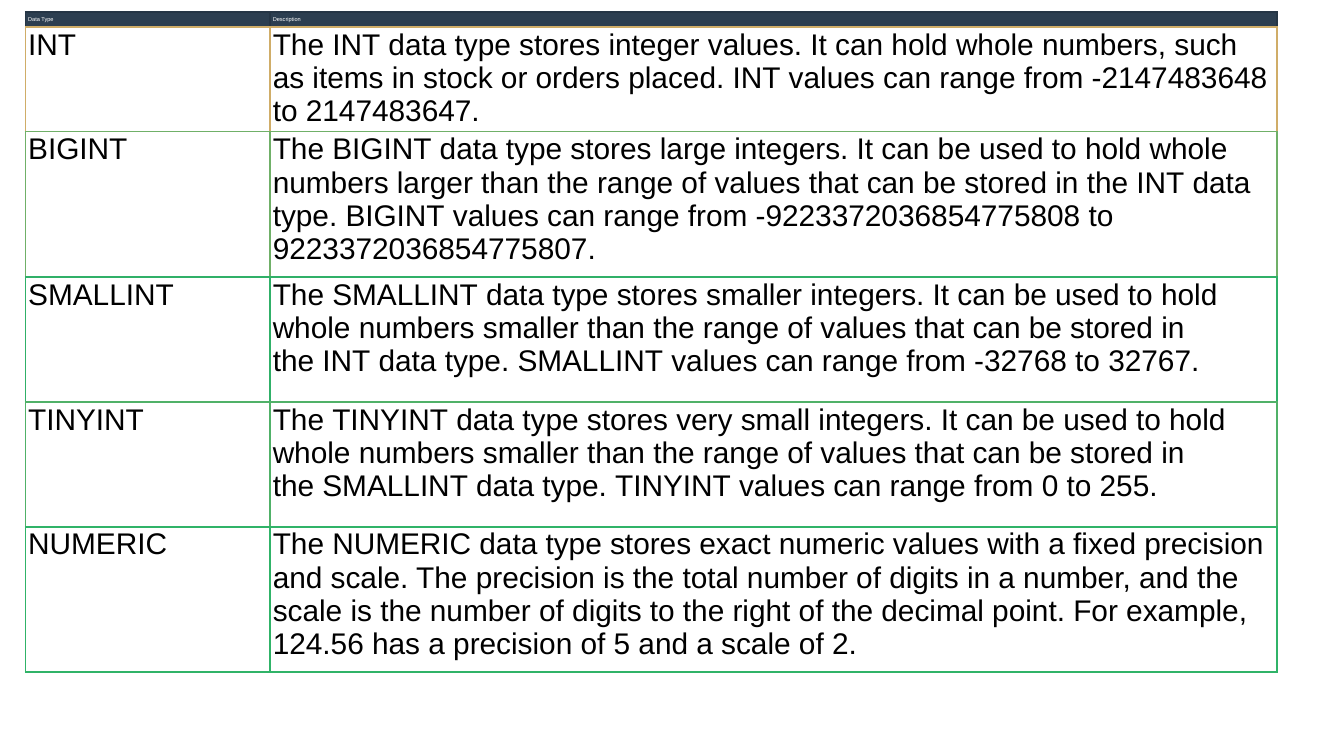
from lxml import etree
from pptx import Presentation
from pptx.dml.color import RGBColor
from pptx.enum.text import MSO_ANCHOR
from pptx.oxml.ns import qn
from pptx.util import Inches, Pt

TOP = MSO_ANCHOR.TOP
MIDDLE = MSO_ANCHOR.MIDDLE
BLANK_LAYOUT = 6
NO_BREAK_SPACE = chr(160)

COLUMN_WIDTHS = [1.82, 7.49]
ROW_HEIGHTS = [0.11, 0.78, 1.08, 0.93, 0.93, 1.08]
ROW_ACCENTS = ["253545", "D0AD68", "70B068", "30B068", "50B168", "30B368"]

ROWS = [
    ("Data Type", "Description"),
    ("INT", "The~INT~data type stores integer values. It can hold whole numbers, such as items in stock "
            "or orders placed.~INT~values can range from -2147483648 to 2147483647."),
    ("BIGINT", "The~BIGINT~data type stores large integers. It can be used to hold whole numbers larger "
               "than the range of values that can be stored in the~INT~data type.~BIGINT~values can "
               "range from -9223372036854775808 to 9223372036854775807."),
    ("SMALLINT", "The~SMALLINT~data type stores smaller integers. It can be used to hold whole numbers "
                 "smaller than the range of values that can be stored in the~INT~data type.~SMALLINT~"
                 "values can range from -32768 to 32767."),
    ("TINYINT", "The~TINYINT~data type stores very small integers. It can be used to hold whole numbers "
                "smaller than the range of values that can be stored in the~SMALLINT~data type.~TINYINT~"
                "values can range from 0 to 255."),
    ("NUMERIC", "The~NUMERIC~data type stores exact numeric values with a fixed precision and scale. The "
                "precision is the total number of digits in a number, and the scale is the number of "
                "digits to the right of the decimal point. For example, 124.56 has a precision of 5 and "
                "a scale of 2."),
]

HEADER_STYLE = {"size": 3, "color": "FFFFFF", "fill": "2C3E50", "anchor": MIDDLE}
BODY_STYLE = {"size": 16, "color": "000000", "fill": "FFFFFF", "anchor": TOP}


def rgb(value):
    return RGBColor.from_string(value)


class SlideBuilder:
    font_name = "Arial"
    border_width = Pt(1)
    cell_format = {
        "margin_left": Inches(0.02),
        "margin_right": Inches(0.02),
        "margin_top": Inches(0.01),
        "margin_bottom": Inches(0.01),
    }

    def __init__(self, slide):
        self.slide = slide

    def borders(self, cell, accent, bottom):
        properties = cell._tc.get_or_add_tcPr()
        for tag, color in (("lnL", accent), ("lnR", accent), ("lnT", accent), ("lnB", bottom)):
            line = etree.SubElement(properties, qn(f"a:{tag}"), w=str(self.border_width))
            fill = etree.SubElement(line, qn("a:solidFill"))
            etree.SubElement(fill, qn("a:srgbClr"), val=color)

    def cell(self, cell, text, style):
        for name, value in self.cell_format.items():
            setattr(cell, name, value)
        cell.vertical_anchor = style["anchor"]
        cell.fill.solid()
        cell.fill.fore_color.rgb = rgb(style["fill"])
        run = cell.text_frame.paragraphs[0].add_run()
        run.text = text.replace("~", NO_BREAK_SPACE)
        font_format = {"name": self.font_name, "size": Pt(style["size"]), "bold": False}
        for name, value in font_format.items():
            setattr(run.font, name, value)
        run.font.color.rgb = rgb(style["color"])

    def table(self, left, top, rows, widths, heights, accents):
        frame = self.slide.shapes.add_table(
            len(rows), len(widths), Inches(left), Inches(top),
            Inches(sum(widths)), Inches(sum(heights)))
        table = frame.table
        table.first_row = False
        table.horz_banding = False
        for column, width in zip(table.columns, widths):
            column.width = Inches(width)
        bottoms = accents[1:] + accents[-1:]
        for index, (row, texts) in enumerate(zip(table.rows, rows)):
            row.height = Inches(heights[index])
            style = BODY_STYLE if index else HEADER_STYLE
            for cell, text in zip(row.cells, texts):
                self.borders(cell, accents[index], bottoms[index])
                self.cell(cell, text, style)


def main():
    presentation = Presentation()
    presentation.slide_width = Inches(10)
    presentation.slide_height = Inches(10 * 9 / 16)
    slide = presentation.slides.add_slide(presentation.slide_layouts[BLANK_LAYOUT])
    builder = SlideBuilder(slide)
    builder.table(0.19, 0.09, ROWS, COLUMN_WIDTHS, ROW_HEIGHTS, ROW_ACCENTS)
    presentation.save("out.pptx")


if __name__ == "__main__":
    main()
